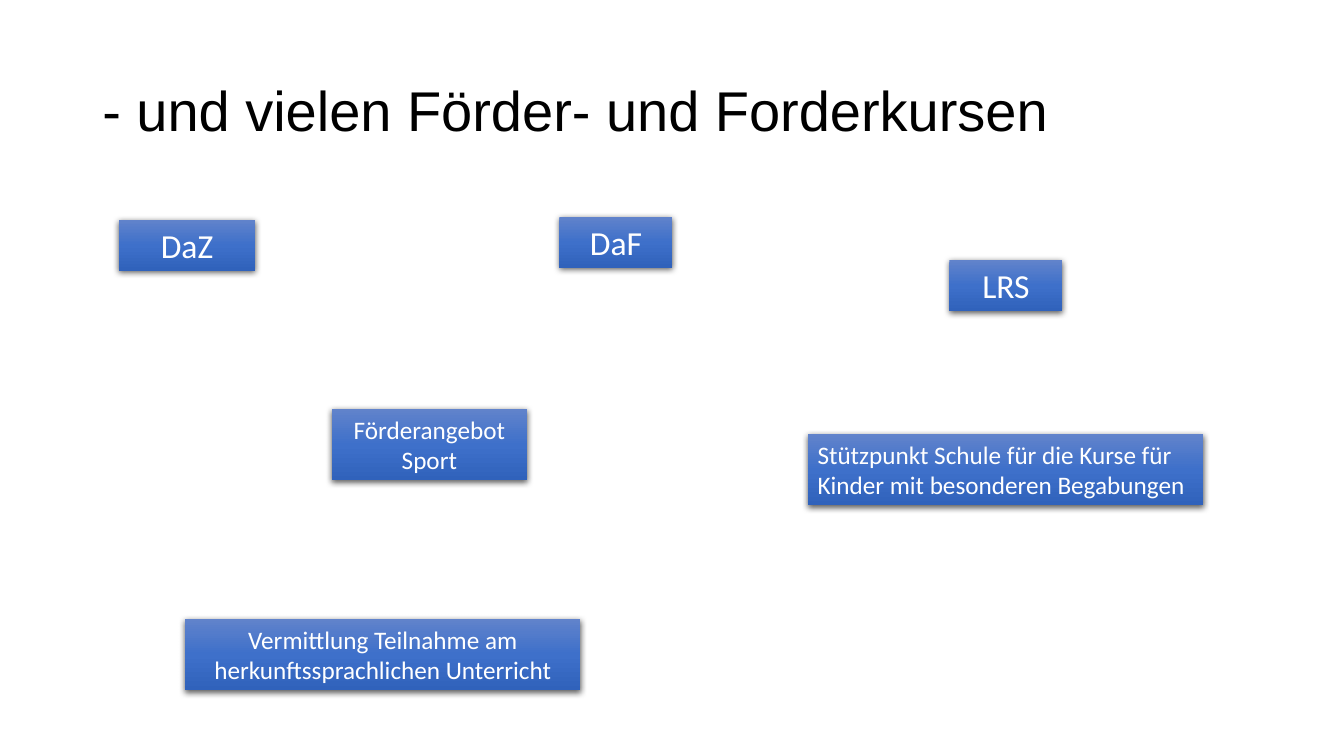
from lxml.etree import SubElement as Sub
from pptx import Presentation
from pptx.dml.color import RGBColor
from pptx.enum.shapes import MSO_SHAPE as Shape
from pptx.enum.text import MSO_ANCHOR as Anchor, MSO_AUTO_SIZE as Fit, PP_ALIGN as Align
from pptx.oxml import parse_xml
from pptx.oxml.ns import nsdecls, qn
from pptx.util import Pt

STOPS = [(0, "6183CB"), (50, "3E70CA"), (100, "3062BB")]
SMALL, LARGE = 36.35, 50.9  # heights of one-line and two-line boxes

COURSES = [
    ("DaZ", (85, 157, 97.2, SMALL), 24, Align.CENTER),
    ("DaF", (399.6, 154.8, 80.8, SMALL), 24, Align.CENTER),
    ("LRS", (678.2, 185.8, 80.8, SMALL), 24, Align.CENTER),
    ("Förderangebot Sport", (236.9, 292.3, 139.7, LARGE), 18, Align.CENTER),
    ("Vermittlung Teilnahme am herkunftssprachlichen Unterricht",
     (132.3, 442.1, 282.4, LARGE), 18, Align.CENTER),
    ("Stützpunkt Schule für die Kurse für Kinder mit besonderen Begabungen",
     (576.9, 310.2, 282.4, LARGE), 18, Align.LEFT),
]


def write(frame, text, name, size, color, align):
    frame.word_wrap = True
    frame.text = text
    para = frame.paragraphs[0]
    para.alignment = align
    font = para.runs[0].font
    font.name, font.size = name, Pt(size)
    font.color.rgb = RGBColor.from_string(color)
    return para


def shade(shape):
    """Give the shape a vertical three-colour gradient and a soft shadow."""
    shape.line.fill.background()
    shape.shadow.inherit = False
    props = shape.fill._xPr
    stops = "".join(
        f'<a:gs pos="{pos * 1000}"><a:srgbClr val="{color}"/></a:gs>'
        for pos, color in STOPS)
    grad = parse_xml(
        f'<a:gradFill {nsdecls("a")} rotWithShape="1"><a:gsLst>{stops}</a:gsLst>'
        '<a:lin ang="5400000" scaled="0"/></a:gradFill>')
    props.find(qn("a:ln")).addprevious(grad)
    glow = Sub(props.find(qn("a:effectLst")), qn("a:outerShdw"),
               blurRad=str(Pt(4.5)), dist=str(Pt(1.5)), dir="5400000",
               algn="ctr", rotWithShape="0")
    black = Sub(glow, qn("a:srgbClr"), val="000000")
    Sub(black, qn("a:alpha"), val="63000")


def add_title(slide, text, box):
    frame = slide.shapes.add_textbox(*map(Pt, box)).text_frame
    para = write(frame, text, "Arial", 40, "000000", Align.LEFT)
    para.line_spacing = 0.9
    frame.vertical_anchor = Anchor.MIDDLE


def add_course(slide, text, box, size, align):
    shape = slide.shapes.add_shape(Shape.RECTANGLE, *map(Pt, box))
    shade(shape)
    frame = shape.text_frame
    write(frame, text, "Calibri", size, "FFFFFF", align)
    frame.vertical_anchor = Anchor.TOP
    frame.auto_size = Fit.SHAPE_TO_FIT_TEXT


def main():
    deck = Presentation()
    deck.slide_width, deck.slide_height = Pt(960), Pt(540)
    slide = deck.slides.add_slide(deck.slide_layouts[6])
    add_title(slide, "- und vielen Förder- und Forderkursen", (66, 28.75, 828, 104.4))
    for course in COURSES:
        add_course(slide, *course)
    deck.save("out.pptx")


if __name__ == "__main__":
    main()
